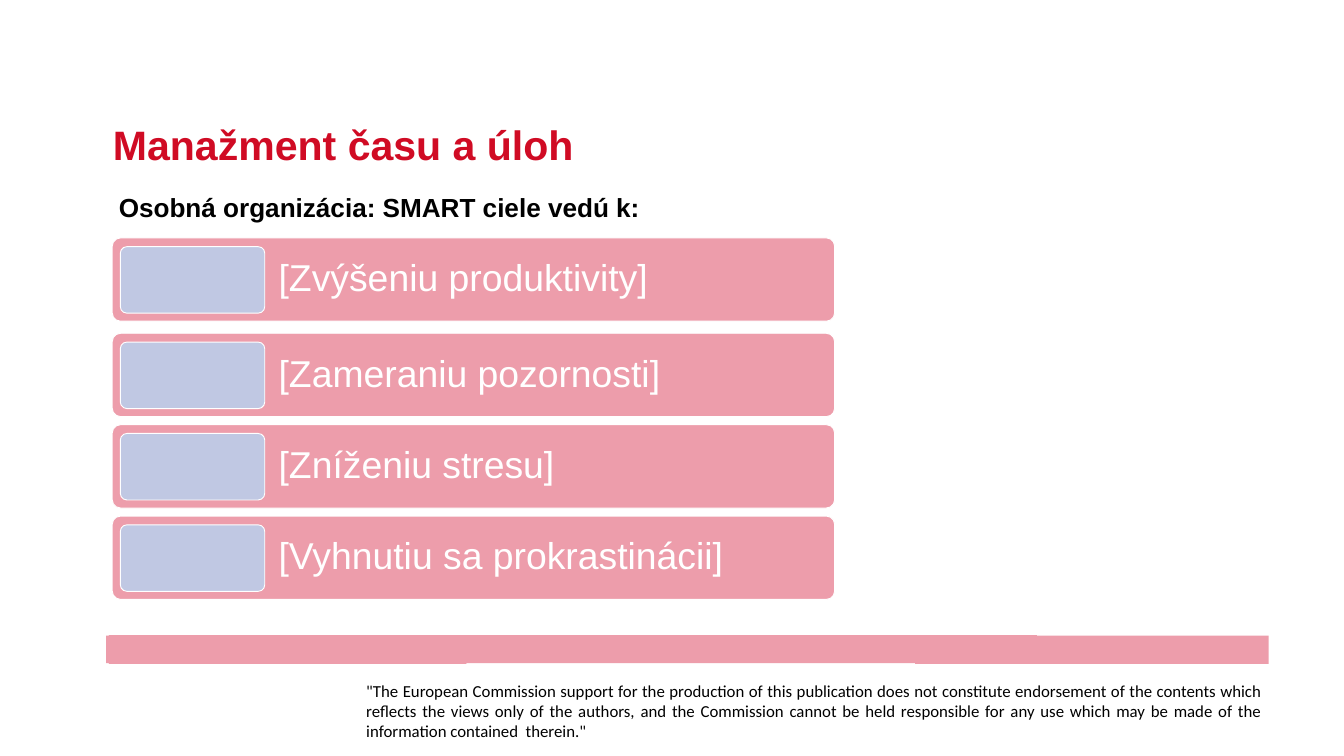
from pptx import Presentation
from pptx.dml.color import RGBColor
from pptx.enum.shapes import MSO_SHAPE as SHAPE
from pptx.enum.text import MSO_ANCHOR as ANCHOR, MSO_AUTO_SIZE as AUTO, PP_ALIGN as ALIGN
from pptx.util import Inches, Pt

PINK, BLUE, RED, WHITE, BLACK = "ED9DAB", "C0C8E3", "D00B24", "FFFFFF", "000000"
GOALS = [
    (3.54, "[Zvýšeniu produktivity]"),
    (4.96, "[Zameraniu pozornosti]"),
    (6.32, "[Zníženiu stresu]"),
    (7.68, "[Vyhnutiu sa prokrastinácii]"),
]
DISCLAIMER = (
    '"The European Commission support for the production of this publication does not '
    "constitute endorsement of the contents which reflects the views only of the authors, "
    "and the Commission cannot be held responsible for any use which may be made of the "
    'information contained  therein."'
)
BAR_OUTLINE = [
    (1888, 946), (1543, 946), (1543, 945), (162, 945), (162, 946), (158, 946),
    (158, 987), (162, 987), (162, 988), (694, 988), (694, 987), (1362, 987),
    (1362, 988), (1888, 988),
]


def rgb(color):
    """Turn a hex string into a colour."""
    return RGBColor.from_string(color)


def write(s, text, size, color, bold=False, font="Arial", align=ALIGN.LEFT,
          anchor=ANCHOR.TOP, insets=(0.1, 0.05, 0.1, 0.05), spacing=1.0):
    """Put one formatted paragraph into a shape."""
    tf = s.text_frame
    tf.word_wrap = True
    tf.auto_size = AUTO.NONE
    tf.vertical_anchor = anchor
    tf.margin_left, tf.margin_top, tf.margin_right, tf.margin_bottom = map(Inches, insets)
    p = tf.paragraphs[0]
    p.text = text
    p.alignment = align
    p.line_spacing = spacing
    p.font.name = font
    p.font.size = Pt(size)
    p.font.bold = bold
    p.font.color.rgb = rgb(color)


def add_title(slide, text, *box):
    """Place and format the title placeholder."""
    s = slide.shapes.title
    s.left, s.top, s.width, s.height = map(Inches, box)
    write(s, text, 44, RED, bold=True)


def add_text(slide, text, box, size, **style):
    """Add a black text box."""
    s = slide.shapes.add_textbox(*map(Inches, box))
    write(s, text, size, BLACK, **style)


def add_panel(slide, color, *box):
    """Add a rounded rectangle with a thin white outline."""
    s = slide.shapes.add_shape(SHAPE.ROUNDED_RECTANGLE, *map(Inches, box))
    s.adjustments[0] = 0.1
    s.shadow.inherit = False
    s.fill.solid()
    s.fill.fore_color.rgb = rgb(color)
    s.line.color.rgb = rgb(WHITE)
    s.line.width = Pt(1)
    return s


def add_goal(slide, top, text):
    """Add a goal row with its inset panel."""
    row = add_panel(slide, PINK, 1.67, top, 10.75, 1.24)
    write(row, text, 40, WHITE, anchor=ANCHOR.MIDDLE,
          insets=(2.44, 0.17, 0.17, 0.17), spacing=0.9)
    add_panel(slide, BLUE, 1.79, top + 0.13, 2.15, 0.99)


def add_bar(slide):
    """Add the footer bar, outlined in hundredths of an inch."""
    builder = slide.shapes.build_freeform(*BAR_OUTLINE[0], scale=Inches(0.01))
    builder.add_line_segments(BAR_OUTLINE[1:], close=True)
    s = builder.convert_to_shape()
    s.shadow.inherit = False
    s.fill.solid()
    s.fill.fore_color.rgb = rgb(PINK)
    s.line.fill.background()


def main():
    """Build and save the slide."""
    prs = Presentation()
    prs.slide_width, prs.slide_height = Inches(20), Inches(11.25)
    slide = prs.slides.add_slide(prs.slide_layouts[5])
    add_title(slide, "Manažment času a úloh", 1.58, 1.72, 9.64, 0.83)
    add_bar(slide)
    add_text(slide, DISCLAIMER, (5.45, 10.15, 13.33, 0.76), 18, font="Calibri",
             align=ALIGN.JUSTIFY, insets=(0, 0, 0, 0), spacing=0.98)
    add_text(slide, "Osobná organizácia: SMART ciele vedú k:",
             (1.67, 2.8, 14.42, 0.56), 28, bold=True)
    for top, text in GOALS:
        add_goal(slide, top, text)
    prs.save("out.pptx")


if __name__ == "__main__":
    main()
